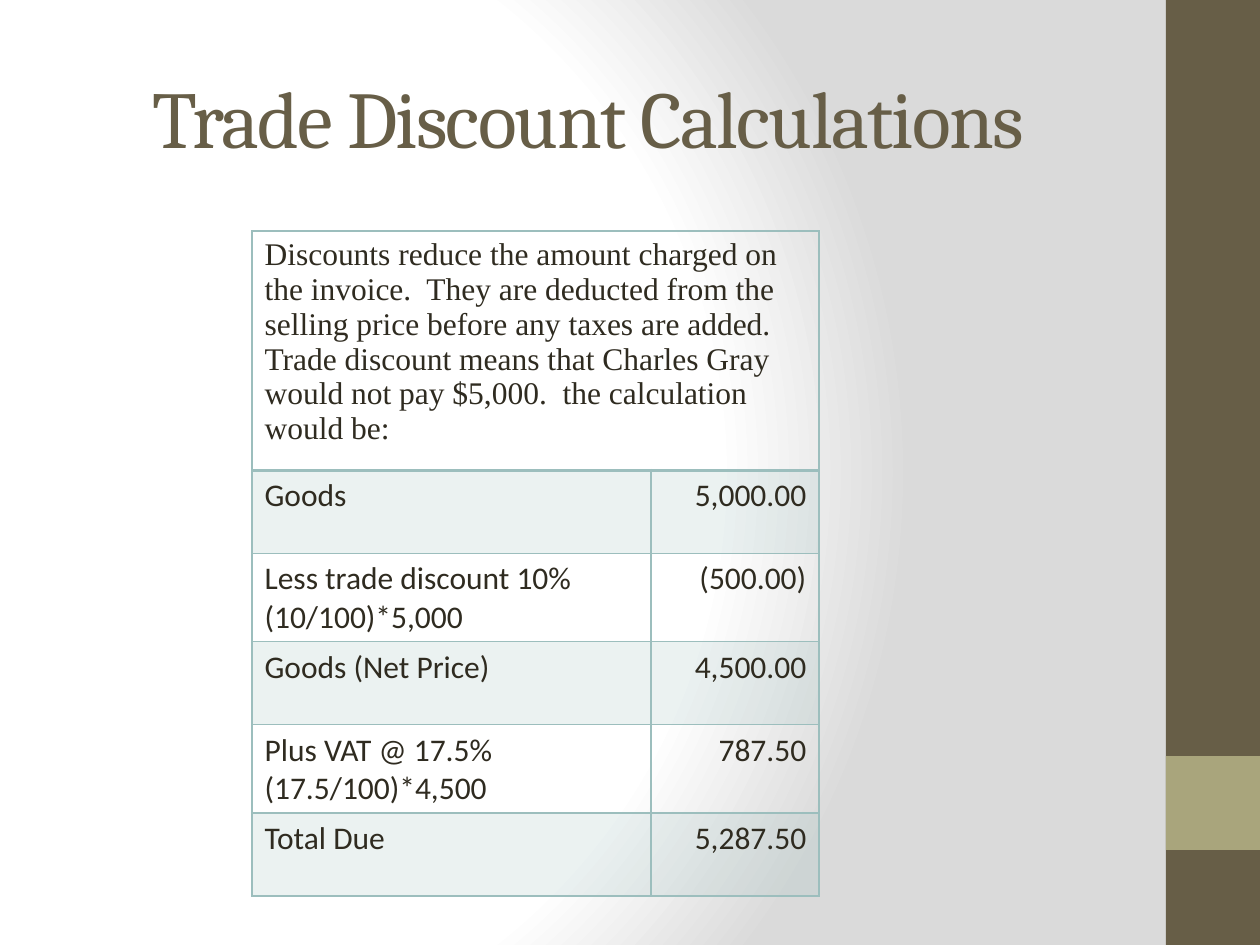
from lxml.etree import SubElement
from pptx import Presentation
from pptx.dml.color import RGBColor
from pptx.enum.shapes import MSO_SHAPE
from pptx.enum.text import MSO_ANCHOR, PP_ALIGN
from pptx.oxml import parse_xml
from pptx.oxml.ns import nsdecls, qn
from pptx.util import Pt

EMU_PER_PX = 914400 / 126
COLORS = {
    "brown": "675E47",
    "olive": "A9A57C",
    "teal": "9CBEBD",
    "text": "2F2B20",
    "white": "FFFFFF",
    "gray": "DADADA",
}
INTRO = (
    "Discounts reduce the amount charged on the invoice.  They are deducted "
    "from the selling price before any taxes are added.  Trade discount means "
    "that Charles Gray would not pay $5,000.  the calculation would be:"
)
INVOICE_ROWS = [
    (["Goods"], "5,000.00"),
    (["Less trade discount 10%", "(10/100)*5,000"], "(500.00)"),
    (["Goods (Net Price)"], "4,500.00"),
    (["Plus VAT @ 17.5%", "(17.5/100)*4,500"], "787.50"),
    (["Total Due"], "5,287.50"),
]
COLUMN_WIDTHS = [399, 168]
INTRO_HEIGHT, ROW_HEIGHT = 205, 83


def px(n):
    return round(n * EMU_PER_PX)


def rgb(name):
    return RGBColor.from_string(COLORS[name])


def write(tf, lines, font="Calibri", size=18, color="text", align=PP_ALIGN.LEFT, spacing=None):
    """Write one paragraph for each line; spacing is in hundredths of a point."""
    for i, line in enumerate(lines):
        p = tf.add_paragraph() if i else tf.paragraphs[0]
        p.alignment = align
        r = p.add_run()
        r.text = line
        r.font.name = font
        r.font.size = Pt(size)
        r.font.color.rgb = rgb(color)
        if spacing is not None:
            r.font._element.set("spc", str(spacing))


def set_background(s):
    """Radial gradient, white at its focus and gray at the edge."""
    stops = [(0, "white"), (75000, "white"), (100000, "gray")]
    gs = "".join(
        f'<a:gs pos="{pos}"><a:srgbClr val="{COLORS[name]}"/></a:gs>' for pos, name in stops
    )
    s.background.fill.solid()
    bg_pr = s._element.cSld.find(qn("p:bg")).find(qn("p:bgPr"))
    bg_pr.replace(
        bg_pr.find(qn("a:solidFill")),
        parse_xml(
            f'<a:gradFill {nsdecls("a")} rotWithShape="1"><a:gsLst>{gs}</a:gsLst>'
            '<a:path path="circle">'
            '<a:fillToRect l="20000" t="50000" r="100000" b="50000"/>'
            "</a:path></a:gradFill>"
        ),
    )


def add_block(s, x, y, w, h, color):
    sp = s.shapes.add_shape(MSO_SHAPE.RECTANGLE, px(x), px(y), px(w), px(h))
    sp.shadow.inherit = False
    sp.fill.solid()
    sp.fill.fore_color.rgb = rgb(color)
    sp.line.fill.background()


def add_title(s, text):
    tf = s.shapes.add_textbox(px(63), px(38), px(1050), px(157)).text_frame
    tf.word_wrap = True
    tf.vertical_anchor = MSO_ANCHOR.MIDDLE
    write(tf, [text], font="Cambria", size=46, color="brown", align=PP_ALIGN.CENTER, spacing=-100)


def style_cell(cell, top=1, bottom=1, tinted=False):
    """Set border widths in points, and a translucent teal fill if tinted."""
    if tinted:
        cell.fill.solid()
        cell.fill.fore_color.rgb = rgb("teal")
        clr = cell._tc.tcPr.find(qn("a:solidFill"))[0]
        SubElement(clr, qn("a:alpha")).set("val", "20000")
    else:
        cell.fill.background()
    borders = {"lnL": 1, "lnR": 1, "lnT": top, "lnB": bottom}
    for i, (tag, width) in enumerate(borders.items()):
        ln = parse_xml(
            f'<a:{tag} {nsdecls("a")} w="{Pt(width)}"><a:solidFill>'
            f'<a:srgbClr val="{COLORS["teal"]}"/></a:solidFill></a:{tag}>'
        )
        cell._tc.tcPr.insert(i, ln)


def add_invoice_table(s):
    n = len(INVOICE_ROWS)
    height = INTRO_HEIGHT + n * ROW_HEIGHT
    table = s.shapes.add_table(
        n + 1, 2, px(252), px(231), px(sum(COLUMN_WIDTHS)), px(height)
    ).table
    table.first_row = table.horz_banding = False
    for column, width in zip(table.columns, COLUMN_WIDTHS):
        column.width = px(width)
    for i, row in enumerate(table.rows):
        row.height = px(ROW_HEIGHT if i else INTRO_HEIGHT)

    table.cell(0, 0).merge(table.cell(0, 1))
    write(table.cell(0, 0).text_frame, [INTRO], font="Times New Roman")
    for cell in table.rows[0].cells:
        style_cell(cell, bottom=2)

    for i, (label, amount) in enumerate(INVOICE_ROWS, start=1):
        write(table.cell(i, 0).text_frame, label)
        write(table.cell(i, 1).text_frame, [amount], align=PP_ALIGN.RIGHT)
        for cell in table.rows[i].cells:
            style_cell(cell, top=2 if i == 1 else 1, tinted=i % 2 == 1)


def main():
    prs = Presentation()
    prs.slide_width, prs.slide_height = px(1260), px(945)
    s = prs.slides.add_slide(prs.slide_layouts[6])
    set_background(s)
    add_block(s, 1166, 0, 94, 945, "brown")
    add_block(s, 1166, 756, 94, 94, "olive")
    add_title(s, "Trade Discount Calculations")
    add_invoice_table(s)
    prs.save("out.pptx")


if __name__ == "__main__":
    main()
